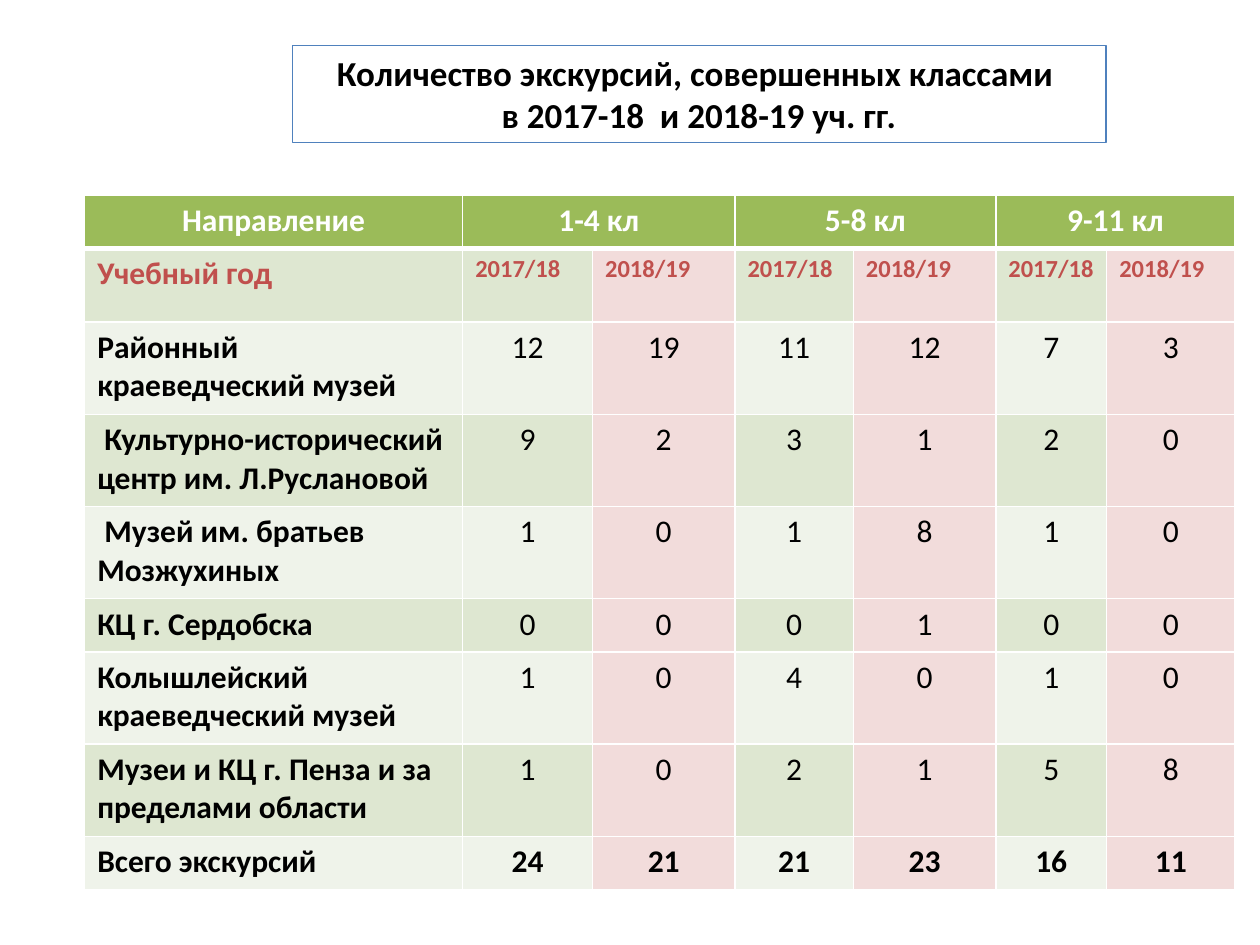
"""Build a slide with a table of school excursions by museum, class group and year."""
from pptx import Presentation
from pptx.dml.color import RGBColor
from pptx.enum.shapes import MSO_SHAPE as SHAPE
from pptx.enum.text import MSO_ANCHOR as ANCHOR, PP_ALIGN as ALIGN
from pptx.oxml import parse_xml
from pptx.oxml.ns import nsdecls
from pptx.util import Pt


def rgb(value):
    return RGBColor.from_string(value)


def style(p, size, color, bold, align):
    p.alignment = align
    p.font.name = "Calibri"
    p.font.size = Pt(size)
    p.font.bold = bold
    p.font.color.rgb = rgb(color)


prs = Presentation()
prs.slide_width, prs.slide_height = Pt(720), Pt(540)
s = prs.slides.add_slide(prs.slide_layouts[6])

sp = s.shapes.add_shape(SHAPE.RECTANGLE, Pt(167), Pt(25.9), Pt(465.1), Pt(55.7))
sp.shadow.inherit = False
sp.fill.background()
sp.line.color.rgb = rgb("4F81BD")
sp.line.width = Pt(0.75)
tf = sp.text_frame
tf.word_wrap = True
tf.vertical_anchor = ANCHOR.TOP
tf.text = "Количество экскурсий, совершенных классами \nв 2017-18  и 2018-19 уч. гг."
for p in tf.paragraphs:
    style(p, 20, "000000", True, ALIGN.CENTER)

rows = [
    ["Направление", "1-4 кл", "", "5-8 кл", "", "9-11 кл", ""],
    ["Учебный год"] + ["2017/18", "2018/19"] * 3,
    ["Районный краеведческий музей", 12, 19, 11, 12, 7, 3],
    [" Культурно-исторический центр им. Л.Руслановой", 9, 2, 3, 1, 2, 0],
    [" Музей им. братьев Мозжухиных", 1, 0, 1, 8, 1, 0],
    ["КЦ г. Сердобска", 0, 0, 0, 1, 0, 0],
    ["Колышлейский краеведческий музей", 1, 0, 4, 0, 1, 0],
    ["Музеи и КЦ г. Пенза и за пределами области", 1, 0, 2, 1, 5, 8],
    ["Всего экскурсий", 24, 21, 21, 23, 16, 11],
]
widths = [216, 74.2, 81.4, 67.7, 81.4, 63.4, 73.4]
heights = [30.4, 42.2, 52.7, 52.7, 52.7, 30.4, 52.7, 52.7, 30.4]
last = len(rows) - 1

table = s.shapes.add_table(len(rows), len(widths), Pt(48.4), Pt(111.5),
                           Pt(sum(widths)), Pt(sum(heights))).table
for column, width in zip(table.columns, widths):
    column.width = Pt(width)
for row, height in zip(table.rows, heights):
    row.height = Pt(height)

for i, values in enumerate(rows):
    for j, value in enumerate(values):
        cell = table.cell(i, j)
        cell.text = str(value)
        if i == 0:
            fill, size, color = "9BBB59", 18, "FFFFFF"
        else:
            band = "DEE7D1" if i % 2 else "EFF3EA"
            fill = "F2DCDB" if j and j % 2 == 0 else band
            size = 14 if i == 1 and j else 18
            color = "C0504D" if i == 1 else "000000"
        bold = j == 0 or i in (0, 1, last)
        centred = i == 0 or (i > 1 and j > 0)
        style(cell.text_frame.paragraphs[0], size, color, bold,
              ALIGN.CENTER if centred else ALIGN.LEFT)
        cell.fill.solid()
        cell.fill.fore_color.rgb = rgb(fill)
        tcPr = cell._tc.get_or_add_tcPr()
        for k, side in enumerate("LRTB"):
            thick = (i, side) in ((0, "B"), (1, "T"))
            tcPr.insert(k, parse_xml(
                f'<a:ln{side} {nsdecls("a")} w="{Pt(3 if thick else 1)}"><a:solidFill>'
                f'<a:srgbClr val="FFFFFF"/></a:solidFill></a:ln{side}>'))

for j in (1, 3, 5):
    table.cell(0, j).merge(table.cell(0, j + 1))

prs.save("out.pptx")
